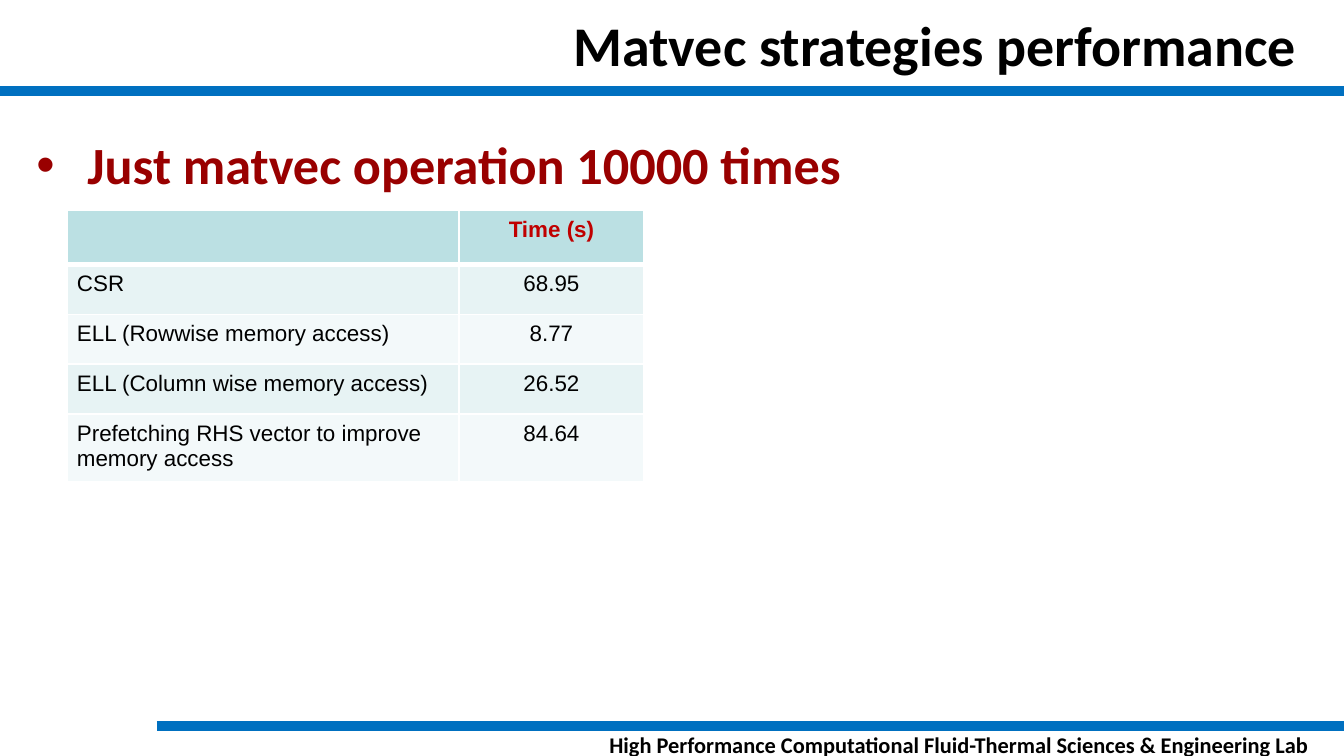
from dataclasses import dataclass

from lxml.etree import SubElement
from pptx import Presentation
from pptx.dml.color import RGBColor
from pptx.enum.shapes import MSO_CONNECTOR
from pptx.enum.text import MSO_ANCHOR, MSO_AUTO_SIZE, PP_ALIGN
from pptx.oxml.ns import qn
from pptx.util import Emu, Pt

TITLE = "Matvec strategies performance"
BULLET = "Just matvec operation 10000 times"
LAB = "High Performance Computational Fluid-Thermal Sciences & Engineering Lab"
TIMINGS = [
    ("", "Time (s)"),
    ("CSR", "68.95"),
    ("ELL (Rowwise memory access)", "8.77"),
    ("ELL (Column wise memory access)", "26.52"),
    ("Prefetching RHS vector to improve memory access", "84.64"),
]

SLIDE_SIZE = (1344, 756)
TITLE_BOX = (23, 4, 1287, 81)
BODY_BOX = (23, 126, 1287, 554)
LAB_BOX = (588, 731, 721, 27)
RULES = [(0, 91, 1344), (157, 726, 1344)]
TABLE_ORIGIN = (67, 210)
COLUMN_WIDTHS = (392, 185)
ROW_HEIGHTS = (50, 50, 50, 50, 63)
CELL_MARGINS = (10, 7)
BULLET_INDENT = 51


@dataclass(frozen=True)
class Theme:
    heading_font: str = "Calibri"
    table_font: str = "Arial"
    text: str = "000000"
    bullet: str = "990000"
    table_head: str = "C00000"
    rule: str = "0070C0"
    border: str = "FFFFFF"
    head_fill: str = "BBE0E3"
    band_fills: tuple = ("E7F3F4", "F3F9FA")
    title_size: int = 30
    bullet_size: int = 28
    small_size: int = 12
    rule_width: int = 5
    border_width: int = 1
    head_border_width: int = 3


THEME = Theme()


def px(length):
    return Emu(round(length * 914400 / 134.4))


def place(shape, box):
    shape.left, shape.top, shape.width, shape.height = map(px, box)


def write(frame, text, *, size, color=THEME.text, font=THEME.heading_font,
          bold=True, align=PP_ALIGN.LEFT, anchor=MSO_ANCHOR.TOP):
    frame.word_wrap = True
    frame.vertical_anchor = anchor
    paragraph = frame.paragraphs[0]
    paragraph.alignment = align
    paragraph.space_before = Pt(0)
    run = paragraph.add_run()
    run.text = text
    run.font.name = font
    run.font.size = Pt(size)
    run.font.bold = bold
    run.font.color.rgb = RGBColor.from_string(color)
    return paragraph


def add_bullet(paragraph, character, indent):
    properties = paragraph._p.get_or_add_pPr()
    properties.set("marL", str(px(indent)))
    properties.set("indent", str(-px(indent)))
    SubElement(properties, qn("a:buChar"), char=character)


def add_rule(slide, left, y, right):
    line = slide.shapes.add_connector(
        MSO_CONNECTOR.STRAIGHT, px(left), px(y), px(right), px(y))
    line.line.color.rgb = RGBColor.from_string(THEME.rule)
    line.line.width = Pt(THEME.rule_width)
    SubElement(line._element.spPr, qn("a:effectLst"))


def add_border(cell, side, width):
    line = SubElement(cell._tc.get_or_add_tcPr(), qn(f"a:ln{side}"), w=str(Pt(width)))
    fill = SubElement(line, qn("a:solidFill"))
    SubElement(fill, qn("a:srgbClr"), val=THEME.border)


def format_cell(cell, text, row, column):
    is_head = row == 0
    cell.margin_left = cell.margin_right = px(CELL_MARGINS[0])
    cell.margin_top = cell.margin_bottom = px(CELL_MARGINS[1])
    for side in "LRTB" if is_head else "LRB":
        thick = is_head and side == "B"
        add_border(cell, side, THEME.head_border_width if thick else THEME.border_width)
    cell.fill.solid()
    fill = THEME.head_fill if is_head else THEME.band_fills[(row - 1) % 2]
    cell.fill.fore_color.rgb = RGBColor.from_string(fill)
    write(cell.text_frame, text, size=THEME.small_size, font=THEME.table_font,
          color=THEME.table_head if is_head else THEME.text, bold=is_head,
          align=PP_ALIGN.CENTER if column else PP_ALIGN.LEFT)


def add_timings(slide):
    size = (sum(COLUMN_WIDTHS), sum(ROW_HEIGHTS))
    table = slide.shapes.add_table(
        len(TIMINGS), len(COLUMN_WIDTHS), *map(px, TABLE_ORIGIN + size)).table
    for column, width in zip(table.columns, COLUMN_WIDTHS):
        column.width = px(width)
    for row, height in zip(table.rows, ROW_HEIGHTS):
        row.height = px(height)
    for row, texts in enumerate(TIMINGS):
        for column, text in enumerate(texts):
            format_cell(table.cell(row, column), text, row, column)


def main():
    presentation = Presentation()
    presentation.slide_width, presentation.slide_height = map(px, SLIDE_SIZE)
    slide = presentation.slides.add_slide(presentation.slide_layouts[1])

    lab = slide.shapes.add_textbox(*map(px, LAB_BOX)).text_frame
    lab.margin_left = lab.margin_right = lab.margin_top = lab.margin_bottom = 0
    write(lab, LAB, size=THEME.small_size, align=PP_ALIGN.RIGHT)
    for rule in RULES:
        add_rule(slide, *rule)

    title = slide.shapes.title
    place(title, TITLE_BOX)
    title.text_frame.auto_size = MSO_AUTO_SIZE.NONE
    write(title.text_frame, TITLE, size=THEME.title_size,
          align=PP_ALIGN.RIGHT, anchor=MSO_ANCHOR.MIDDLE)

    body = slide.placeholders[1]
    place(body, BODY_BOX)
    body.text_frame.auto_size = MSO_AUTO_SIZE.NONE
    paragraph = write(body.text_frame, BULLET, size=THEME.bullet_size, color=THEME.bullet)
    add_bullet(paragraph, "•", BULLET_INDENT)

    add_timings(slide)
    presentation.save("out.pptx")


if __name__ == "__main__":
    main()
